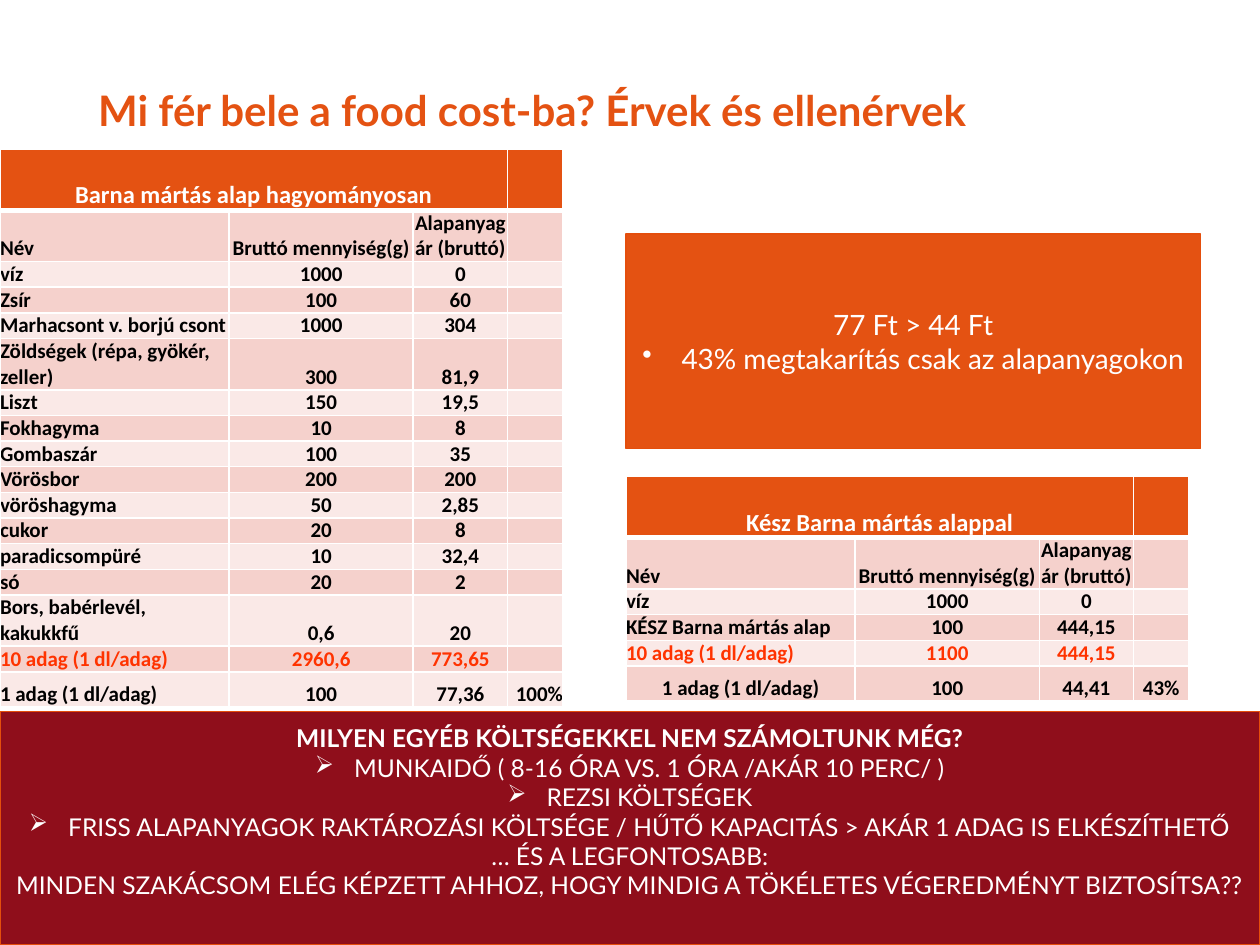
import pptx
import pptx.dml.color
import pptx.enum.shapes
import pptx.enum.text
import pptx.oxml.ns
import pptx.util
from lxml import etree

Cm = pptx.util.Cm
Pt = pptx.util.Pt
RGBColor = pptx.dml.color.RGBColor
ALIGN = pptx.enum.text.PP_ALIGN
ANCHOR = pptx.enum.text.MSO_ANCHOR
qn = pptx.oxml.ns.qn

ORANGE = RGBColor(0xE4, 0x52, 0x12)
EDGE = RGBColor(0xE4, 0x4E, 0x0C)
WINE = RGBColor(0x8F, 0x0E, 0x1B)
RED = RGBColor(0xFF, 0x33, 0x00)
WHITE = RGBColor(0xFF, 0xFF, 0xFF)
BLACK = RGBColor(0, 0, 0)
BANDS = (RGBColor(0xFA, 0xE9, 0xE7), RGBColor(0xF5, 0xD1, 0xCC))

COLUMN_WIDTHS = (4.62, 3.71, 1.9, 1.12)
HEADER_HEIGHT, ROW_HEIGHT, TALL_HEIGHT = 1.24, 0.48, 0.71
INDENT = Cm(0.79)
NO_MARGINS = dict.fromkeys(
    ("margin_left", "margin_top", "margin_right", "margin_bottom"), 0)

HEADINGS = ("Név", "Bruttó mennyiség(g)", "Alapanyag ár (bruttó)")
TRADITIONAL = [
    ("víz", "1000", "0"),
    ("Zsír", "100", "60"),
    ("Marhacsont v. borjú csont", "1000", "304"),
    ("Zöldségek (répa, gyökér, zeller)", "300", "81,9"),
    ("Liszt", "150", "19,5"),
    ("Fokhagyma", "10", "8"),
    ("Gombaszár", "100", "35"),
    ("Vörösbor", "200", "200"),
    ("vöröshagyma", "50", "2,85"),
    ("cukor", "20", "8"),
    ("paradicsompüré", "10", "32,4"),
    ("só", "20", "2"),
    ("Bors, babérlevél, kakukkfű", "0,6", "20"),
    ("10 adag (1 dl/adag)", "2960,6", "773,65"),
    ("1 adag (1 dl/adag)", "100", "77,36", "100%"),
]
READY_BASE = [
    ("víz", "1000", "0"),
    ("KÉSZ Barna mártás alap", "100", "444,15"),
    ("10 adag (1 dl/adag)", "1100", "444,15"),
    ("1 adag (1 dl/adag)", "100", "44,41", "43%"),
]
COSTS = [
    ("", "MILYEN EGYÉB KÖLTSÉGEKKEL NEM SZÁMOLTUNK MÉG?", True),
    ("➢", "MUNKAIDŐ ( 8-16 ÓRA VS. 1 ÓRA /AKÁR 10 PERC/ )", False),
    ("➢", "REZSI KÖLTSÉGEK", False),
    ("➢", "FRISS ALAPANYAGOK RAKTÁROZÁSI KÖLTSÉGE / HŰTŐ KAPACITÁS > "
          "AKÁR 1 ADAG IS ELKÉSZÍTHETŐ", False),
    ("", "… ÉS A LEGFONTOSABB:", False),
    ("", "MINDEN SZAKÁCSOM ELÉG KÉPZETT AHHOZ, HOGY MINDIG A TÖKÉLETES "
         "VÉGEREDMÉNYT BIZTOSÍTSA??", False),
]
SAVING = [
    ("", "77 Ft > 44 Ft", False),
    ("•", "43% megtakarítás csak az alapanyagokon", False),
]


def set_all(target, values):
    for name, value in values.items():
        setattr(target, name, value)


def add_text(p, text, align, color, **font):
    p.alignment = align
    r = p.add_run()
    r.text = text
    set_all(r.font, font)
    r.font.color.rgb = color


def add_title(s, text):
    sp = s.shapes.title
    set_all(sp, {"left": Cm(1.98), "top": Cm(1.7),
                 "width": Cm(23.06), "height": Cm(1.02)})
    tf = sp.text_frame
    set_all(tf, {**NO_MARGINS, "word_wrap": True,
                 "auto_size": pptx.enum.text.MSO_AUTO_SIZE.NONE,
                 "vertical_anchor": ANCHOR.BOTTOM})
    add_text(tf.paragraphs[0], text, ALIGN.LEFT, ORANGE,
             name="Lato", size=Pt(24), bold=True)


def add_bullet(p, char):
    ppr = p._p.get_or_add_pPr()
    ppr.set("marL", str(INDENT))
    ppr.set("indent", str(-INDENT))
    etree.SubElement(ppr, qn("a:buChar"), char=char)


def add_panel(s, left, top, width, height, fill, size, lines, bottom=0):
    sp = s.shapes.add_shape(pptx.enum.shapes.MSO_SHAPE.RECTANGLE,
                            Cm(left), Cm(top), Cm(width), Cm(height))
    sp.shadow.inherit = False
    sp.fill.solid()
    sp.fill.fore_color.rgb = fill
    sp.line.color.rgb = EDGE
    sp.line.width = Pt(0.75)
    tf = sp.text_frame
    set_all(tf, {**NO_MARGINS, "margin_bottom": Cm(bottom),
                 "word_wrap": True, "vertical_anchor": ANCHOR.MIDDLE})
    for i, (bullet, text, bold) in enumerate(lines):
        p = tf.add_paragraph() if i else tf.paragraphs[0]
        if bullet:
            add_bullet(p, bullet)
        add_text(p, text, ALIGN.CENTER, WHITE,
                 name="Lato", size=Pt(size), bold=bold)


def set_borders(cell, top, bottom):
    tcpr = cell._tc.get_or_add_tcPr()
    for side, width in (("L", 1), ("R", 1), ("T", top), ("B", bottom)):
        ln = etree.SubElement(tcpr, qn("a:ln" + side), w=str(Pt(width)))
        fill = etree.SubElement(ln, qn("a:solidFill"))
        etree.SubElement(fill, qn("a:srgbClr"), val=str(WHITE))


def format_cell(cell, text, fill, align, color, size, top=1, bottom=1):
    set_borders(cell, top, bottom)
    cell.fill.solid()
    cell.fill.fore_color.rgb = fill
    set_all(cell, {**NO_MARGINS, "vertical_anchor": ANCHOR.BOTTOM})
    p = cell.text_frame.paragraphs[0]
    if text:
        add_text(p, text, align, color,
                 name="Calibri", size=Pt(size), bold=True)
    else:
        etree.SubElement(p._p, qn("a:endParaRPr"), sz=str(size * 100))


def add_cost_table(s, left, top, title, items, tall_rows, last_aligns):
    rows = [HEADINGS] + items
    last = len(rows)
    heights = [HEADER_HEIGHT] + [
        TALL_HEIGHT if i in tall_rows or i == last else ROW_HEIGHT
        for i in range(1, last + 1)]
    table = s.shapes.add_table(
        last + 1, len(COLUMN_WIDTHS), Cm(left), Cm(top),
        Cm(sum(COLUMN_WIDTHS)), Cm(sum(heights))).table
    table.first_row = table.horz_banding = False
    for column, width in zip(table.columns, COLUMN_WIDTHS):
        column.width = Cm(width)
    for row, height in zip(table.rows, heights):
        row.height = Cm(height)
    table.cell(0, 0).merge(table.cell(0, 2))
    for j in range(len(COLUMN_WIDTHS)):
        format_cell(table.cell(0, j), "" if j else title, ORANGE,
                    ALIGN.CENTER, WHITE, 14, bottom=3)
    for i, values in enumerate(rows, 1):
        color = RED if values[0].startswith("10 adag") else BLACK
        first, final = last_aligns if i == last else (ALIGN.LEFT, ALIGN.CENTER)
        aligns = (first, ALIGN.CENTER, ALIGN.CENTER, final)
        for j, align in enumerate(aligns):
            text = values[j] if j < len(values) else ""
            format_cell(table.cell(i, j), text, BANDS[i % 2], align, color,
                        12, top=3 if i == 1 else 1)


def main():
    prs = pptx.Presentation()
    prs.slide_width, prs.slide_height = Cm(25.4), Cm(19.05)
    s = prs.slides.add_slide(prs.slide_layouts[5])
    add_title(s, "Mi fér bele a food cost-ba? Érvek és ellenérvek")
    add_cost_table(s, 0, 3, "Barna mártás alap hagyományosan", TRADITIONAL,
                   (5,), (ALIGN.LEFT, ALIGN.RIGHT))
    add_cost_table(s, 12.62, 9.6, "Kész Barna mártás alappal", READY_BASE,
                   (), (ALIGN.CENTER, ALIGN.CENTER))
    add_panel(s, 0, 14.35, 25.4, 4.7, WINE, 14, COSTS, bottom=0.68)
    add_panel(s, 12.62, 4.72, 11.58, 4.32, ORANGE, 16, SAVING)
    prs.save("out.pptx")


if __name__ == "__main__":
    main()
